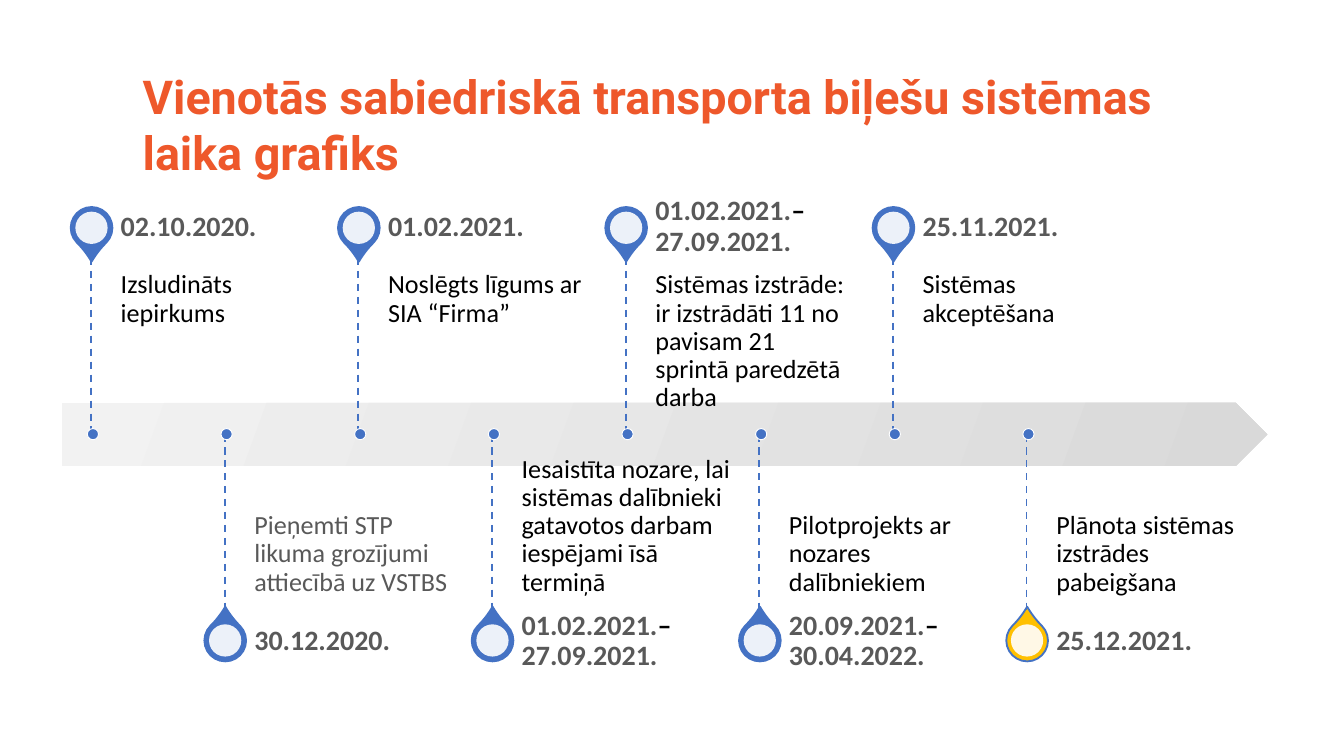
"""Build the timeline slide of the unified public transport ticketing system."""
from dataclasses import dataclass

from lxml import etree
from pptx import Presentation
from pptx.dml.color import RGBColor
from pptx.enum.dml import MSO_LINE
from pptx.enum.shapes import MSO_CONNECTOR, MSO_SHAPE
from pptx.enum.text import MSO_ANCHOR
from pptx.oxml.ns import qn
from pptx.util import Pt

ORANGE = RGBColor(0xEE, 0x58, 0x2B)
BLUE = RGBColor(0x44, 0x72, 0xC4)
GOLD = RGBColor(0xFF, 0xC0, 0x00)
WHITE = RGBColor(0xFF, 0xFF, 0xFF)
BLACK = RGBColor(0x00, 0x00, 0x00)
GREY = RGBColor(0x59, 0x59, 0x59)
BAND_LIGHT = RGBColor(0xF2, 0xF2, 0xF2)
BAND_DARK = RGBColor(0xD9, 0xD9, 0xD9)
TEARDROP, OVAL, PENTAGON = MSO_SHAPE.TEAR, MSO_SHAPE.OVAL, MSO_SHAPE.PENTAGON
TOP, MIDDLE, BOTTOM = MSO_ANCHOR.TOP, MSO_ANCHOR.MIDDLE, MSO_ANCHOR.BOTTOM
STRAIGHT, DASH = MSO_CONNECTOR.STRAIGHT, MSO_LINE.DASH

STEP = 71.6
AXIS_Y = 232.6
STEM = 94.4
DATE_H = 33.1
TEXT_W = 113
PIN = 22.3
HOLE = 17.3
DOT = 6


@dataclass(frozen=True)
class Milestone:
    start: str
    label: str
    end: str = ""
    label_color: RGBColor = BLACK
    pin_color: RGBColor = BLUE


@dataclass(frozen=True)
class Run:
    text: str
    size: float
    color: RGBColor
    bold: bool = False
    font: str = "Calibri"


MILESTONES = [
    Milestone("02.10.2020.", "Izsludināts iepirkums"),
    Milestone("30.12.2020.", "Pieņemti STP likuma grozījumi attiecībā uz VSTBS",
              label_color=GREY),
    Milestone("01.02.2021.", "Noslēgts līgums ar SIA “Firma”"),
    Milestone("01.02.2021.", "Iesaistīta nozare, lai sistēmas dalībnieki "
              "gatavotos darbam iespējami īsā termiņā", "27.09.2021."),
    Milestone("01.02.2021.", "Sistēmas izstrāde: ir izstrādāti 11 no pavisam 21 "
              "sprintā paredzētā darba", "27.09.2021."),
    Milestone("20.09.2021.", "Pilotprojekts ar nozares dalībniekiem", "30.04.2022."),
    Milestone("25.11.2021.", "Sistēmas akceptēšana"),
    Milestone("25.12.2021.", "Plānota sistēmas izstrādes pabeigšana", pin_color=GOLD),
]


def add_text(s, box: tuple, runs: list[Run], anchor, insets: tuple,
             spacing: float = 0.9) -> None:
    tf = s.shapes.add_textbox(*map(Pt, box)).text_frame
    tf.word_wrap = True
    tf.vertical_anchor = anchor
    tf.margin_left, tf.margin_top, tf.margin_right, tf.margin_bottom = map(Pt, insets)
    p = tf.paragraphs[0]
    p.line_spacing = spacing
    for run in runs:
        r = p.add_run()
        r.text = run.text
        r.font.name, r.font.size = run.font, Pt(run.size)
        r.font.bold, r.font.color.rgb = run.bold, run.color


def add_solid(s, kind, box: tuple, fill: RGBColor, line: RGBColor | None = None,
              width: float = 1):
    sp = s.shapes.add_shape(kind, *map(Pt, box))
    sp.shadow.inherit = False
    sp.fill.solid()
    sp.fill.fore_color.rgb = fill
    if line is None:
        sp.line.fill.background()
    else:
        sp.line.color.rgb, sp.line.width = line, Pt(width)
    return sp


def add_band(s) -> None:
    sp = add_solid(s, PENTAGON, (33.1, 215.8, 645.8, 33.8), BAND_LIGHT)
    sp.fill.gradient()
    sp.fill.gradient_angle = 340
    for stop, color in zip(sp.fill.gradient_stops, (BAND_LIGHT, BAND_DARK)):
        stop.color.rgb = color


def add_stem(s, x: float, top: float) -> None:
    cx = s.shapes.add_connector(STRAIGHT, Pt(x), Pt(top), Pt(x), Pt(top + STEM))
    cx.line.color.rgb, cx.line.width = BLUE, Pt(1)
    cx.line.dash_style = DASH
    etree.SubElement(cx._element.spPr, qn("a:effectLst"))


def add_pin(s, x: float, y: float, rotation: int, color: RGBColor) -> None:
    sp = add_solid(s, TEARDROP, (x, y, PIN, PIN), color, BLUE)
    sp.adjustments[0] = 1.15
    sp.rotation = rotation
    gap = (PIN - HOLE) / 2
    hole = add_solid(s, OVAL, (x + gap, y + gap, HOLE, HOLE), WHITE)
    clr = hole._element.spPr.find(qn("a:solidFill"))[0]
    etree.SubElement(clr, qn("a:alpha"), val="90000")


def add_milestone(s, index: int, m: Milestone) -> None:
    x = 37.9 + index * STEP
    above = index % 2 == 0
    stem_top = AXIS_Y - STEM if above else AXIS_Y
    date_top = stem_top - DATE_H if above else stem_top + STEM
    pin_top = date_top + (5.8 if above else 5)
    text_x = x + 26.8

    add_pin(s, x, pin_top, 135 if above else 315, m.pin_color)
    add_text(s, (text_x, stem_top, TEXT_W, STEM), [Run(m.label, 14, m.label_color)],
             TOP if above else BOTTOM,
             (0, 7.2, 7.2, 10.8) if above else (0, 10.8, 0, 7.2))
    dates = [Run(m.start, 15, GREY, True)]
    if m.end:
        dates += [Run("–", 15, BLACK, True), Run(m.end, 15, GREY, True)]
    add_text(s, (text_x, date_top, TEXT_W, DATE_H), dates, MIDDLE, (0, 0, 7.2, 0))
    add_stem(s, x + PIN / 2 - 0.3, stem_top)
    add_solid(s, OVAL, (x + 8.9, AXIS_Y - DOT / 2, DOT, DOT), BLUE, WHITE, 0.5)


def main() -> None:
    prs = Presentation()
    prs.slide_width, prs.slide_height = Pt(720), Pt(405)
    s = prs.slides.add_slide(prs.slide_layouts[6])
    title = Run("Vienotās sabiedriskā transporta biļešu sistēmas laika grafiks",
                25, ORANGE, True, "Roboto")
    add_text(s, (69.4, 30.2, 607.7, 72), [title], MIDDLE, (7.2, 3.6, 7.2, 3.6), 1.0)
    add_band(s)
    for index, milestone in enumerate(MILESTONES):
        add_milestone(s, index, milestone)
    prs.save("out.pptx")


if __name__ == "__main__":
    main()
